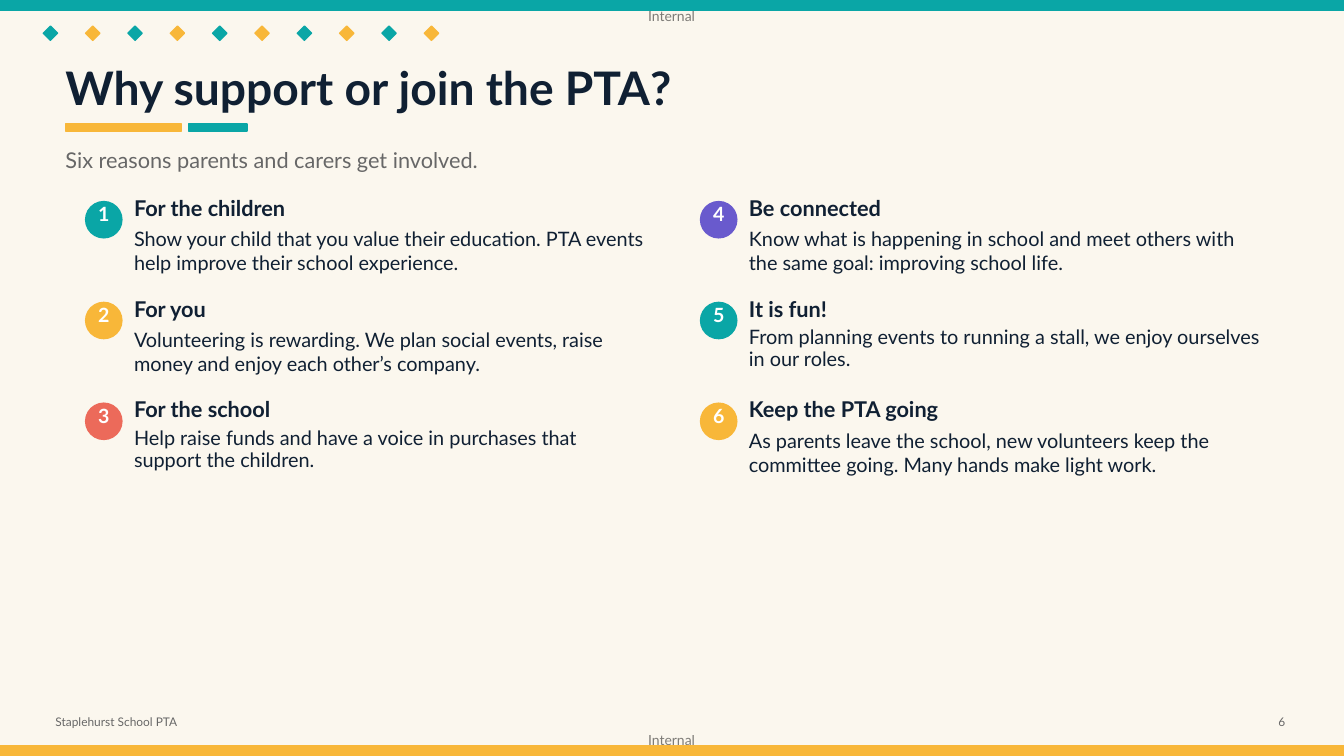
"""Build the slide of six reasons to support or join the PTA."""
import dataclasses

import lxml.etree
import pptx
import pptx.dml.color
import pptx.enum.shapes
import pptx.enum.text
import pptx.oxml.ns
import pptx.util


@dataclasses.dataclass(frozen=True)
class Theme:
    font: str = "Lato"
    paper: str = "FBF7EE"
    ink: str = "102033"
    grey: str = "676767"
    black: str = "000000"
    white: str = "FFFFFF"
    teal: str = "0AA6A6"
    gold: str = "F8B739"
    coral: str = "EC6A5A"
    plum: str = "695ACD"
    title: float = 33
    head: float = 15.5
    body: float = 14.2
    digit: float = 14
    mark: float = 10
    foot: float = 8.5


theme = Theme()
rgb = pptx.dml.color.RGBColor.from_string
kinds = pptx.enum.shapes.MSO_SHAPE
align = pptx.enum.text.PP_ALIGN
anchor = pptx.enum.text.MSO_ANCHOR

deck = pptx.Presentation()
deck.slide_width = pptx.util.Inches(13.33)
deck.slide_height = pptx.util.Inches(7.5)
col = deck.slide_width / 40
row = deck.slide_height / 75
slide = deck.slides.add_slide(deck.slide_layouts[6])
slide.background.fill.solid()
slide.background.fill.fore_color.rgb = rgb(theme.paper)


def block(kind, left, top, wide, high, hue):
    """Draw a plain shape, placed in columns and rows."""
    shape = slide.shapes.add_shape(
        kind, int(left * col), int(top * row), int(wide * col), int(high * row))
    shape.shadow.inherit = False
    shape.fill.solid()
    shape.fill.fore_color.rgb = rgb(hue)
    shape.line.color.rgb = rgb(hue)
    shape.line.width = pptx.util.Pt(1)
    return shape


def label(text, left, top, wide, high, size, hue, bold=False,
          side=align.LEFT, hold=anchor.MIDDLE, space=None):
    """Write a text box without insets and return its run."""
    box = slide.shapes.add_textbox(
        int(left * col), int(top * row), int(wide * col), int(high * row))
    frame = box.text_frame
    frame.margin_left = frame.margin_right = 0
    frame.margin_top = frame.margin_bottom = 0
    frame.word_wrap = True
    frame.vertical_anchor = hold
    frame.text = text
    line = frame.paragraphs[0]
    line.alignment = side
    line.line_spacing = space
    run = line.runs[0]
    run.font.name = theme.font
    run.font.size = pptx.util.Pt(size)
    run.font.bold = bold
    run.font.color.rgb = rgb(hue)
    return run


for top in (0.7, 72.6):
    run = label("Internal", 19.29, top, 1.47, 1.7, theme.mark, theme.black,
                hold=anchor.TOP)
    tint = run.font._element.find(".//" + pptx.oxml.ns.qn("a:srgbClr"))
    lxml.etree.SubElement(tint, pptx.oxml.ns.qn("a:alpha"), val="50000")

block(kinds.RECTANGLE, 0, 0, 40, 1, theme.teal)
block(kinds.RECTANGLE, 0, 74, 40, 1, theme.gold)
for step in range(10):
    hue = (theme.teal, theme.gold)[step % 2]
    gem = block(kinds.RECTANGLE, 1.35 + 1.26 * step, 2.8, 0.3, 1, hue)
    gem.rotation = 45

label("Staplehurst School PTA", 1.65, 70.5, 9.9, 2.2, theme.foot, theme.grey)
label("6", 37.05, 70.5, 1.2, 2.2, theme.foot, theme.grey, side=align.RIGHT)

label("Why support or join the PTA?", 1.95, 5.5, 26.1, 6.2,
      theme.title, theme.ink, bold=True)
block(kinds.RECTANGLE, 1.95, 12.3, 3.45, 0.7, theme.gold)
block(kinds.RECTANGLE, 5.61, 12.3, 1.74, 0.7, theme.teal)
label("Six reasons parents and carers get involved.", 1.95, 13.8, 28.5, 4.2,
      theme.head, theme.grey)

reasons = [
    ("For the children", theme.teal, None,
     "Show your child that you value their education. "
     "PTA events help improve their school experience."),
    ("For you", theme.gold, None,
     "Volunteering is rewarding. We plan social events, "
     "raise money and enjoy each other’s company."),
    ("For the school", theme.coral, 0.9,
     "Help raise funds and have a voice in purchases "
     "that support the children."),
    ("Be connected", theme.plum, None,
     "Know what is happening in school and meet others "
     "with the same goal: improving school life."),
    ("It is fun!", theme.teal, 0.9,
     "From planning events to running a stall, "
     "we enjoy ourselves in our roles."),
    ("Keep the PTA going", theme.gold, None,
     "As parents leave the school, new volunteers keep "
     "the committee going. Many hands make light work."),
]
for spot, (head, hue, space, body) in enumerate(reasons):
    left = 2.55 + 18.3 * (spot // 3)
    top = 20 + 10 * (spot % 3)
    block(kinds.OVAL, left, top, 1.08, 3.6, hue)
    label(str(spot + 1), left, top + 0.25, 1.08, 2.2, theme.digit, theme.white,
          bold=True, side=align.CENTER, space=0.9)
    label(head, left + 1.44, top - 0.5, 15.2, 2.5, theme.head, theme.ink,
          bold=True, space=0.9)
    label(body, left + 1.44, top + 2.5, 15.2, 4.6 if space else 5.4,
          theme.body, theme.ink, hold=anchor.TOP, space=space)

deck.save("out.pptx")
